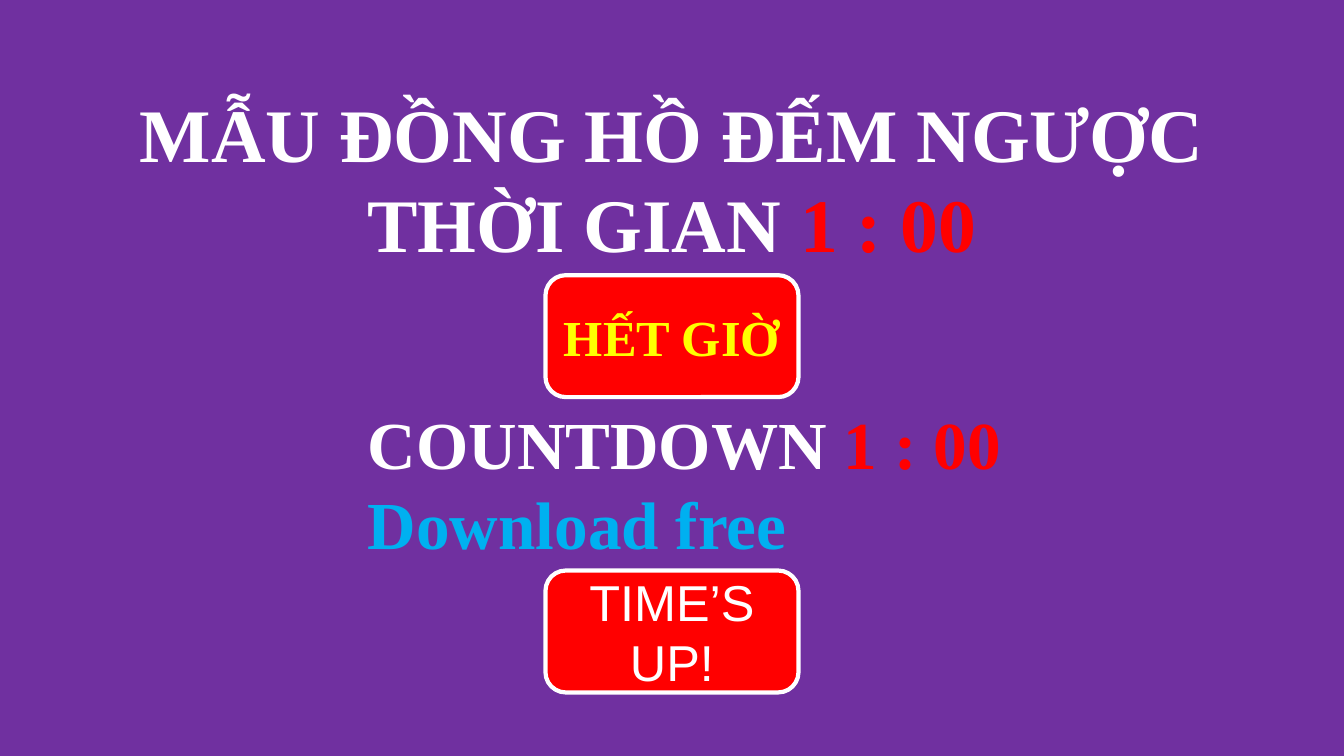
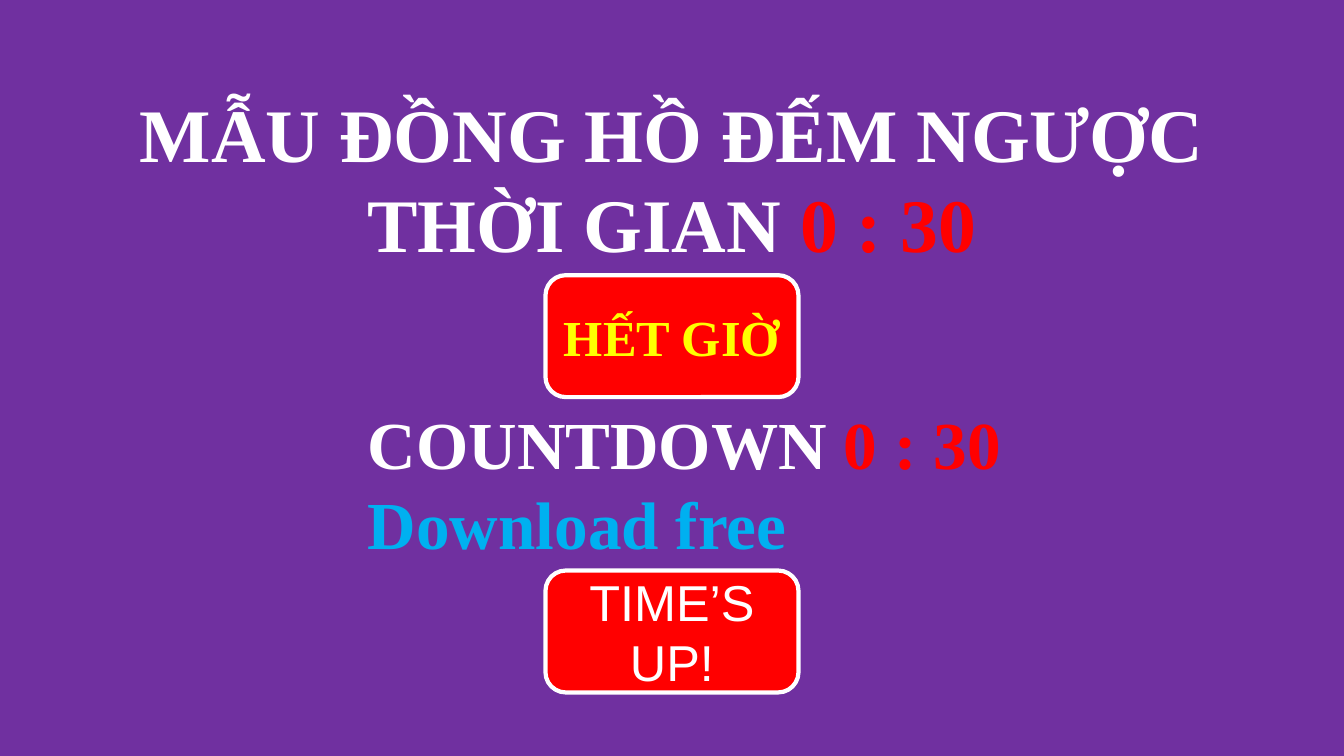
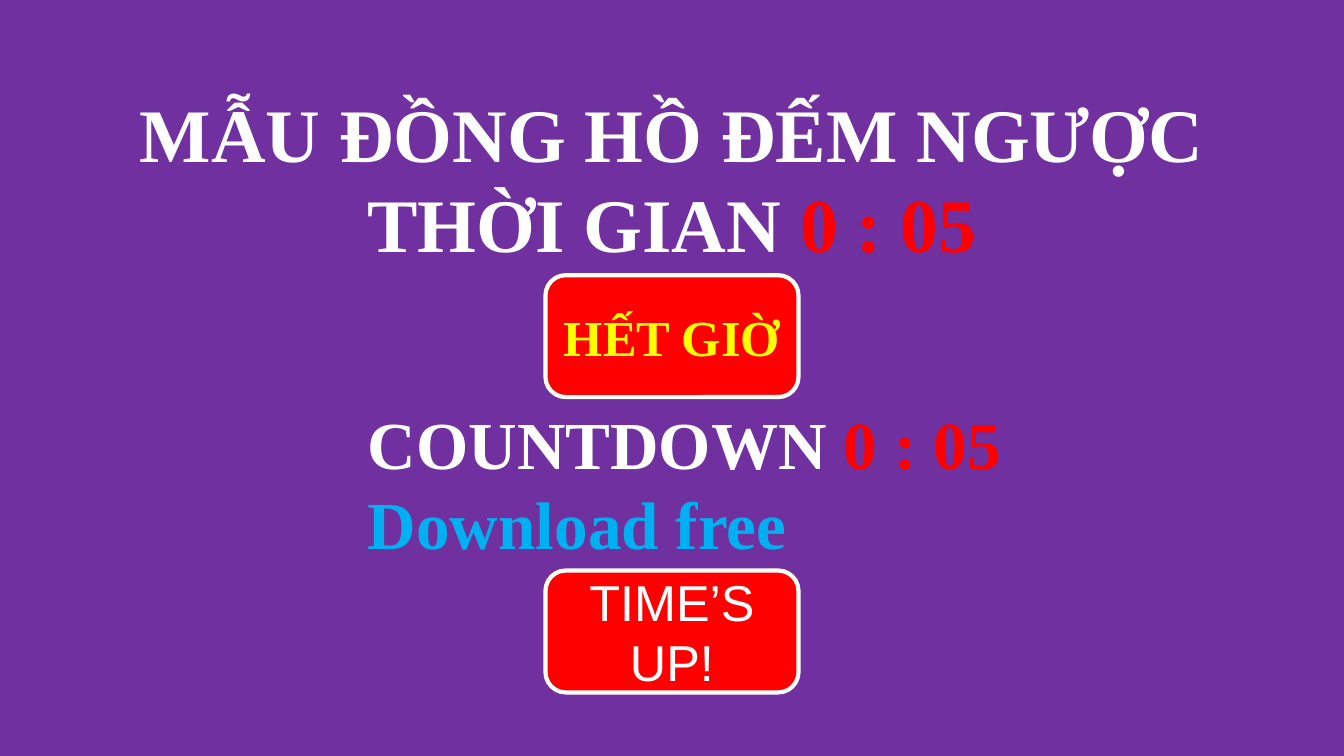
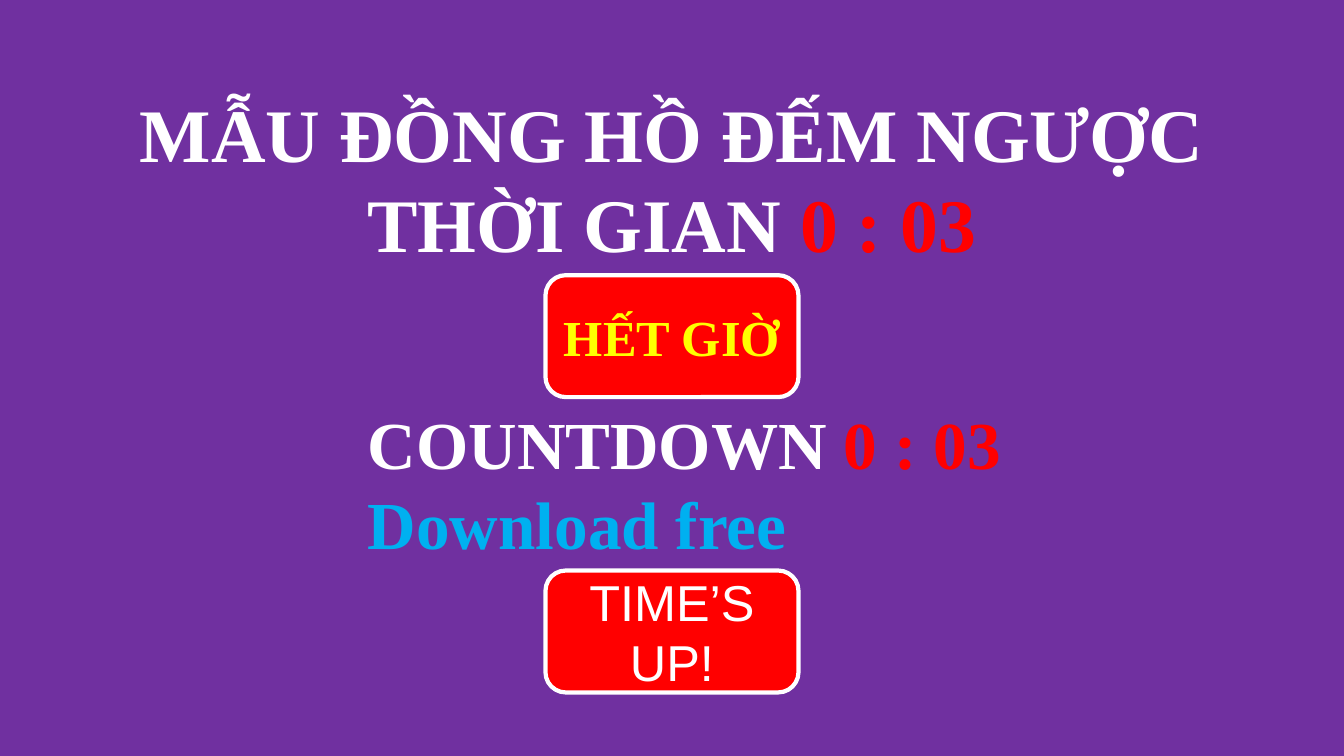
from pptx import Presentation
from pptx.dml.color import RGBColor
from pptx.enum.shapes import MSO_SHAPE
from pptx.enum.text import MSO_ANCHOR, MSO_AUTO_SIZE, PP_ALIGN
from pptx.util import Inches, Pt

SLIDE_W, SLIDE_H = 13.33, 7.5
PURPLE, RED, WHITE, YELLOW, BLUE = "7030A0", "FF0000", "FFFFFF", "FFFF00", "00B0F0"
SERIF, SANS = "Times New Roman", "Arial"

TITLE_W, TITLE_H = 10.86, 1.92
BUTTON_W, BUTTON_H = 2.51, 1.21
ENGLISH_LEFT, ENGLISH_W, ENGLISH_H = 3.55, 6.54, 1.72
TITLE_TOP = 0.81
BUTTON_TOP = TITLE_TOP + TITLE_H
ENGLISH_TOP = BUTTON_TOP + BUTTON_H
END_TOP = ENGLISH_TOP + ENGLISH_H

TIMES = ["1 : 00", "0 : 30", "0 : 05", "0 : 03"]


def paint(fill, color):
    fill.solid()
    fill.fore_color.rgb = RGBColor.from_string(color)


def centred(width):
    return (SLIDE_W - width) / 2


def box(left, top, width, height):
    return [Inches(v) for v in (left, top, width, height)]


def write(tf, lines, size, font=SERIF, bold=True, align=PP_ALIGN.CENTER):
    """Fill a text frame; each line is a list of (text, colour) runs."""
    tf.word_wrap = True
    for i, line in enumerate(lines):
        p = tf.add_paragraph() if i else tf.paragraphs[0]
        p.alignment = align
        for text, color in line:
            r = p.add_run()
            r.text = text
            r.font.name, r.font.size, r.font.bold = font, Pt(size), bold
            r.font.color.rgb = RGBColor.from_string(color)


def add_text(s, place, lines, size, **fmt):
    tf = s.shapes.add_textbox(*box(*place)).text_frame
    tf.auto_size = MSO_AUTO_SIZE.SHAPE_TO_FIT_TEXT
    write(tf, lines, size, **fmt)


def add_button(s, top, text, color, **fmt):
    place = box(centred(BUTTON_W), top, BUTTON_W, BUTTON_H)
    sp = s.shapes.add_shape(MSO_SHAPE.ROUNDED_RECTANGLE, *place)
    sp.shadow.inherit = False
    paint(sp.fill, RED)
    paint(sp.line.fill, WHITE)
    sp.line.width = Pt(3)
    sp.text_frame.vertical_anchor = MSO_ANCHOR.MIDDLE
    write(sp.text_frame, [[(text, color)]], 36, **fmt)


def add_countdown(prs, time):
    s = prs.slides.add_slide(prs.slide_layouts[6])
    add_button(s, BUTTON_TOP, "HẾT GIỜ", YELLOW)
    add_text(s, (centred(TITLE_W), TITLE_TOP, TITLE_W, TITLE_H),
             [[("MẪU ĐỒNG HỒ ĐẾM NGƯỢC", WHITE)],
              [("THỜI GIAN ", WHITE), (time, RED)]], 54)
    add_text(s, (ENGLISH_LEFT, ENGLISH_TOP, ENGLISH_W, ENGLISH_H),
             [[("COUNTDOWN ", WHITE), (time, RED)],
              [("Download free", BLUE)]], 48, align=PP_ALIGN.LEFT)
    add_button(s, END_TOP, "TIME’S UP!", WHITE, font=SANS, bold=False)


def main():
    prs = Presentation()
    prs.slide_width, prs.slide_height = Inches(SLIDE_W), Inches(SLIDE_H)
    paint(prs.slide_master.background.fill, PURPLE)
    for time in TIMES:
        add_countdown(prs, time)
    prs.save("out.pptx")


if __name__ == "__main__":
    main()
